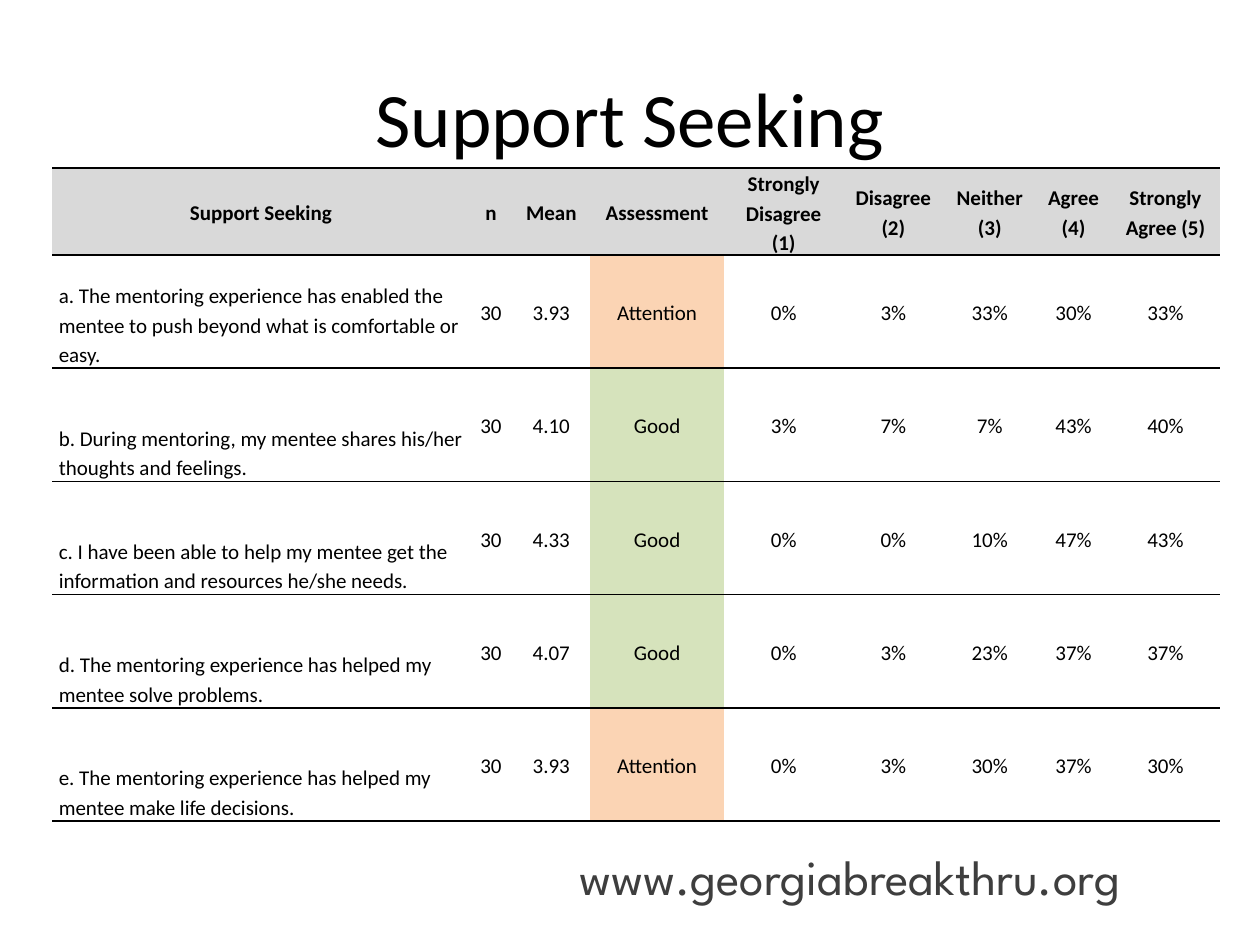
"""Build a slide with survey results on support seeking."""
from lxml.etree import SubElement
from pptx import Presentation
from pptx.dml.color import RGBColor
from pptx.enum.text import MSO_ANCHOR, PP_ALIGN
from pptx.oxml.ns import qn
from pptx.util import Pt

COLORS = {
    "text": "000000",
    "address": "3E3E3E",
    "header": "D9D9D9",
    "Attention": "FBD4B4",
    "Good": "D6E3BC",
}
PLAIN_STYLE = "{2D5ABB26-0587-4C30-8999-92F81FD0307C}"
COLUMN_WIDTHS = [238.3, 24.5, 44.6, 76.3, 68.4, 56.9, 53.3, 42.5, 62.6]
HEADER_HEIGHT, ROW_HEIGHT = 33.1, 64.7
ASSESSMENT_COLUMN = 3
HEADERS = [
    "Support Seeking", "n", "Mean", "Assessment", "Strongly\nDisagree\n(1)",
    "Disagree\n(2)", "Neither\n(3)", "Agree\n(4)", "Strongly Agree (5)",
]
RESULTS = [
    ["a. The mentoring experience has enabled the mentee to push beyond what is comfortable or easy.",
     "30", "3.93", "Attention", "0%", "3%", "33%", "30%", "33%"],
    ["b. During mentoring, my mentee shares his/her thoughts and feelings.",
     "30", "4.10", "Good", "3%", "7%", "7%", "43%", "40%"],
    ["c. I have been able to help my mentee get the information and resources he/she needs.",
     "30", "4.33", "Good", "0%", "0%", "10%", "47%", "43%"],
    ["d. The mentoring experience has helped my mentee solve problems.",
     "30", "4.07", "Good", "0%", "3%", "23%", "37%", "37%"],
    ["e. The mentoring experience has helped my mentee make life decisions.",
     "30", "3.93", "Attention", "0%", "3%", "30%", "37%", "30%"],
]


def style_font(para, size, name, color, bold=False):
    """Set the font of a whole paragraph."""
    para.font.size = Pt(size)
    para.font.name = name
    para.font.bold = bold
    para.font.color.rgb = RGBColor.from_string(COLORS[color])


def add_text(page, box, text, size, name, color, align, anchor):
    """Add one line of text in the given box."""
    frame = page.shapes.add_textbox(*map(Pt, box)).text_frame
    frame.word_wrap = True
    frame.vertical_anchor = anchor
    para = frame.paragraphs[0]
    para.text = text
    para.alignment = align
    style_font(para, size, name, color)


def add_border(cell, side):
    """Draw a thin line along one side of a cell."""
    line = SubElement(cell._tc.get_or_add_tcPr(), qn(f"a:{side}"), w=str(Pt(1)))
    fill = SubElement(line, qn("a:solidFill"))
    SubElement(fill, qn("a:srgbClr"), val=COLORS["text"])


def fill_cell(cell, text, is_header, is_statement, fill):
    """Write and style one table cell."""
    cell.margin_left = cell.margin_right = Pt(3.6)
    cell.margin_top = cell.margin_bottom = Pt(0)
    cell.vertical_anchor = MSO_ANCHOR.BOTTOM if is_statement else MSO_ANCHOR.MIDDLE
    cell.text = text
    for para in cell.text_frame.paragraphs:
        para.alignment = PP_ALIGN.LEFT if is_statement else PP_ALIGN.CENTER
        para.line_spacing = 1.15
        style_font(para, 12, "Calibri", "text", is_header)
    if is_header:
        add_border(cell, "lnT")
    add_border(cell, "lnB")
    if fill:
        cell.fill.solid()
        cell.fill.fore_color.rgb = RGBColor.from_string(COLORS[fill])
    else:
        cell.fill.background()


def add_results(page, box):
    """Add the table of survey results in the given box."""
    rows = [HEADERS, *RESULTS]
    table = page.shapes.add_table(len(rows), len(HEADERS), *map(Pt, box)).table
    table.first_row = table.horz_banding = False
    table._tbl.tblPr.find(qn("a:tableStyleId")).text = PLAIN_STYLE
    for column, width in zip(table.columns, COLUMN_WIDTHS):
        column.width = Pt(width)
    for row_index, values in enumerate(rows):
        is_header = row_index == 0
        table.rows[row_index].height = Pt(HEADER_HEIGHT if is_header else ROW_HEIGHT)
        for column_index, value in enumerate(values):
            is_statement = column_index == 0 and not is_header
            fill = "header" if is_header else value if column_index == ASSESSMENT_COLUMN else None
            fill_cell(table.cell(row_index, column_index), value, is_header, is_statement, fill)


def main():
    """Build and save the deck."""
    deck = Presentation()
    deck.slide_width, deck.slide_height = Pt(720), Pt(540)
    page = deck.slides.add_slide(deck.slide_layouts[6])
    add_text(page, (36, 21.6, 648, 90), "Support Seeking", 44, "Calibri", "text",
             PP_ALIGN.CENTER, MSO_ANCHOR.MIDDLE)
    add_results(page, (30, 96, 668, 373))
    add_text(page, (324, 480, 384, 29), "www.georgiabreakthru.org", 28, "League Spartan",
             "address", PP_ALIGN.LEFT, MSO_ANCHOR.TOP)
    deck.save("out.pptx")


if __name__ == "__main__":
    main()
